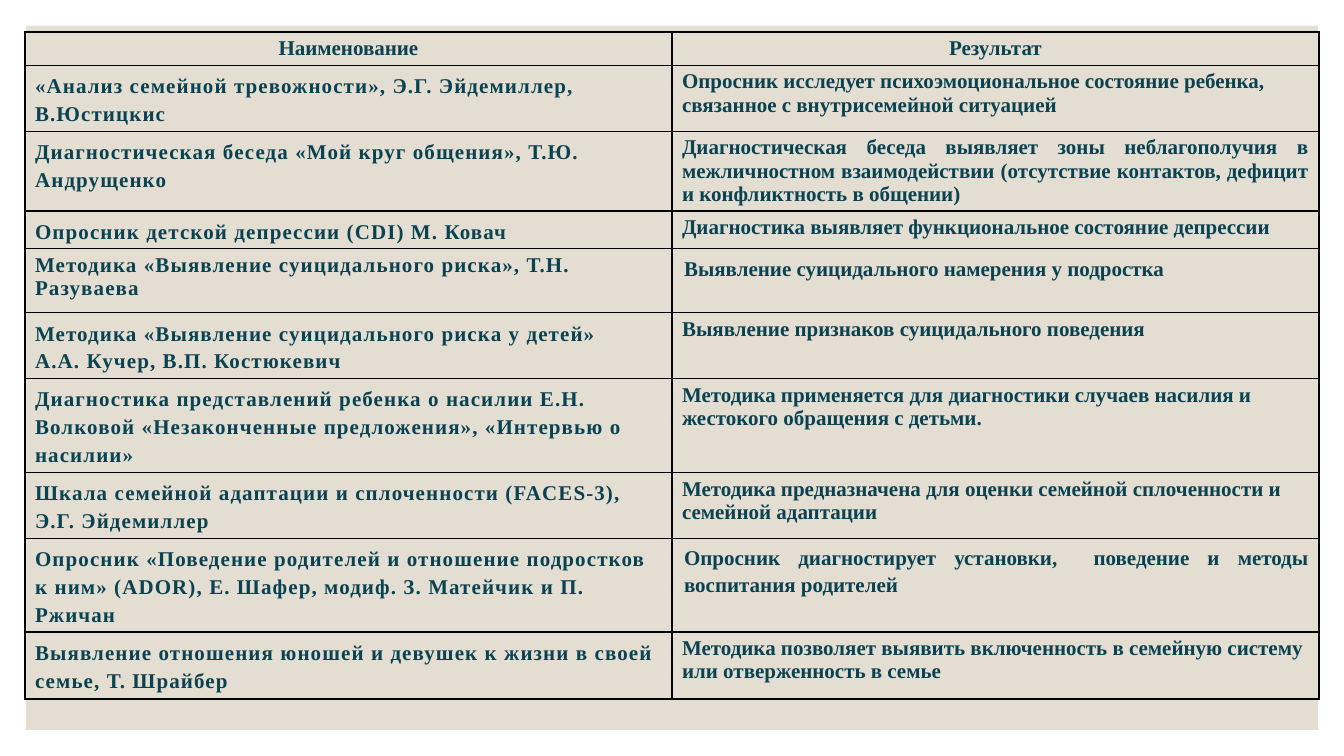
import pptx
import pptx.util
import pptx.oxml
import pptx.oxml.ns
import pptx.dml.color
import pptx.enum.shapes
import pptx.enum.text

COLORS = {"panel": "E3DED1", "text": "0A4252", "border": "000000"}
ALIGN = pptx.enum.text.PP_ALIGN


def px(n):
    return pptx.util.Emu(round(n * 914400 / 100.8))


def rgb(name):
    return pptx.dml.color.RGBColor.from_string(COLORS[name])


deck = pptx.Presentation()
deck.slide_width, deck.slide_height = px(1344), px(756)
slide = deck.slides.add_slide(deck.slide_layouts[6])

# Beige panel behind the table
panel = slide.shapes.add_shape(
    pptx.enum.shapes.MSO_SHAPE.RECTANGLE, px(26), px(26), px(1292), px(704))
panel.shadow.inherit = False
panel.fill.solid()
panel.fill.fore_color.rgb = rgb("panel")
panel.line.fill.background()

# Row height, method (one paragraph per line), result
methods = [
    (33, "Наименование", "Результат"),
    (66, "«Анализ семейной тревожности», Э.Г. Эйдемиллер, В.Юстицкис",
     "Опросник исследует психоэмоциональное состояние ребенка, "
     "связанное с внутрисемейной ситуацией"),
    (79, "Диагностическая беседа «Мой круг общения», Т.Ю. Андрущенко",
     "Диагностическая беседа выявляет зоны неблагополучия в межличностном "
     "взаимодействии (отсутствие контактов, дефицит и конфликтность в общении)"),
    (38, "Опросник детской депрессии (CDI) М. Ковач",
     "Диагностика выявляет функциональное состояние депрессии"),
    (64, "Методика «Выявление суицидального риска», Т.Н. Разуваева",
     "Выявление суицидального намерения у подростка"),
    (65, "Методика «Выявление суицидального риска у детей»\n"
     "А.А. Кучер, В.П. Костюкевич",
     "Выявление признаков суицидального поведения"),
    (94, "Диагностика представлений ребенка о насилии Е.Н. Волковой "
     "«Незаконченные предложения», «Интервью о насилии»",
     "Методика применяется для диагностики случаев насилия и жестокого "
     "обращения с детьми."),
    (66, "Шкала семейной адаптации и сплоченности (FACES-3),\nЭ.Г. Эйдемиллер",
     "Методика предназначена для оценки семейной сплоченности и семейной адаптации"),
    (93, "Опросник «Поведение родителей и отношение подростков к ним» (ADOR), "
     "Е. Шафер, модиф. З. Матейчик и П. Ржичан",
     "Опросник диагностирует установки,  поведение и методы воспитания родителей"),
    (67, "Выявление отношения юношей и девушек к жизни в своей семье, Т. Шрайбер",
     "Методика позволяет выявить включенность в семейную систему "
     "или отверженность в семье"),
]
HEADER, RISK_ROW = 0, 4
JUSTIFIED_ROWS = (2, 8)
INDENTS = {4: "indent", 8: "marL"}  # results set in by 2 px

table = slide.shapes.add_table(
    len(methods), 2, px(25), px(32), px(1294),
    px(sum(height for height, *_ in methods))).table
table.first_row = table.horz_banding = False
for column in table.columns:
    column.width = px(647)

for r, (height, *texts) in enumerate(methods):
    table.rows[r].height = px(height)
    for c, text in enumerate(texts):
        cell = table.cell(r, c)
        cell.text = text

        # Borders, then no fill so the panel shows through
        properties = cell._tc.get_or_add_tcPr()
        for side in ("lnL", "lnR", "lnT", "lnB"):
            properties.append(pptx.oxml.parse_xml(
                f'<a:{side} {pptx.oxml.ns.nsdecls("a")} w="12700"><a:solidFill>'
                f'<a:srgbClr val="{COLORS["border"]}"/></a:solidFill></a:{side}>'))
        cell.fill.background()

        # Text
        for paragraph in cell.text_frame.paragraphs:
            paragraph.font.name = "Times New Roman"
            paragraph.font.size = pptx.util.Pt(15)
            paragraph.font.bold = True
            paragraph.font.color.rgb = rgb("text")
            if r == HEADER:
                paragraph.alignment = ALIGN.CENTER
            elif c == 0:
                if r != RISK_ROW:
                    paragraph.line_spacing = 1.2
                for run in paragraph.runs:
                    run._r.get_or_add_rPr().set("spc", "80")
            else:
                if r in JUSTIFIED_ROWS:
                    paragraph.alignment = ALIGN.JUSTIFY
                if r in INDENTS:
                    paragraph.line_spacing = 1.15
                    paragraph._p.get_or_add_pPr().set(INDENTS[r], str(px(2)))

deck.save("out.pptx")
